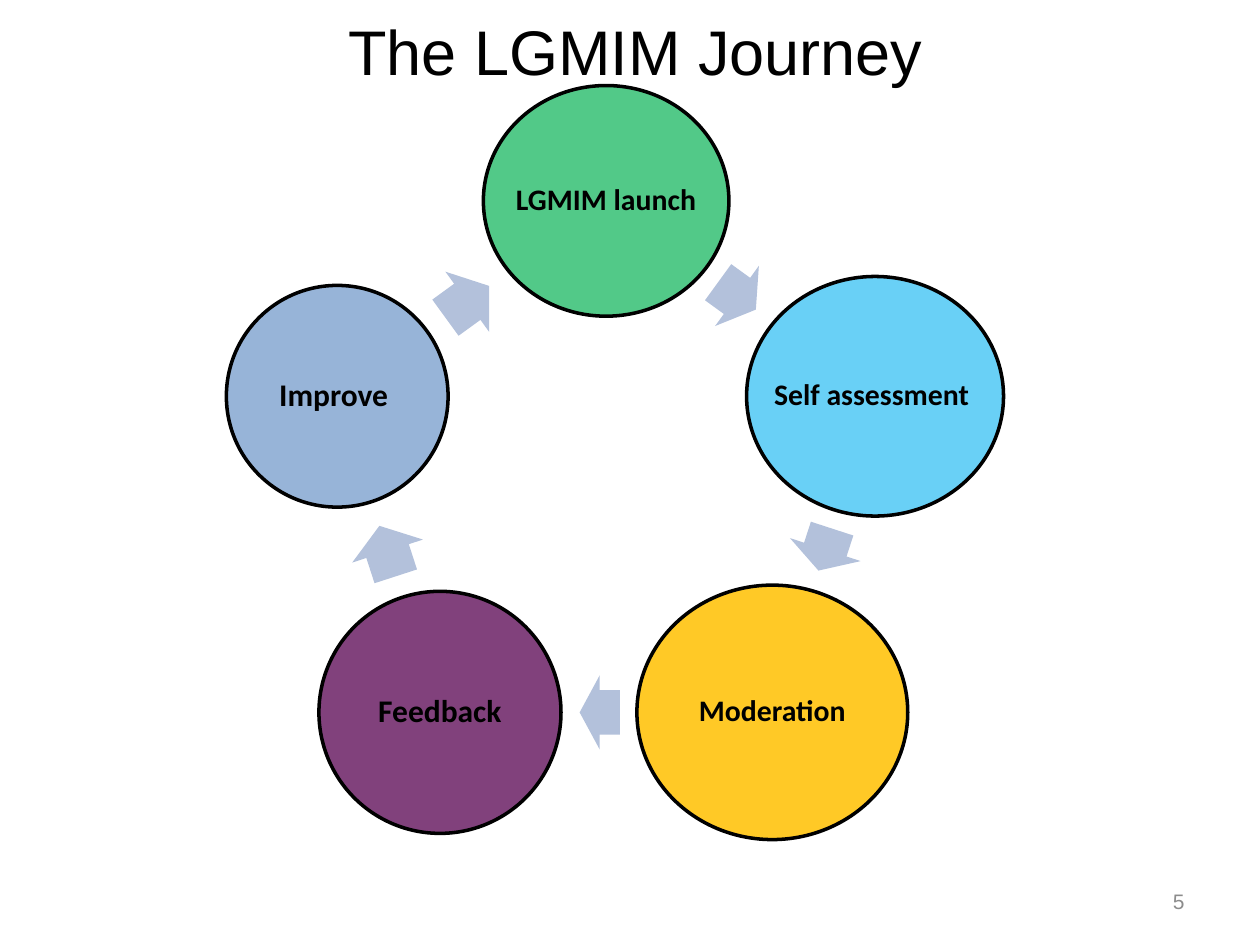
from math import cos, radians, sin

from lxml import etree
from pptx import Presentation
from pptx.dml.color import RGBColor
from pptx.enum.shapes import MSO_SHAPE
from pptx.enum.text import MSO_ANCHOR, PP_ALIGN
from pptx.oxml.ns import qn
from pptx.util import Cm, Pt

OVAL, ARROW = MSO_SHAPE.OVAL, MSO_SHAPE.RIGHT_ARROW
MIDDLE = MSO_ANCHOR.MIDDLE
CENTER, RIGHT = PP_ALIGN.CENTER, PP_ALIGN.RIGHT

BLACK = RGBColor(0x00, 0x00, 0x00)
GRAY = RGBColor(0x8C, 0x8C, 0x8C)
MIST = RGBColor(0xB3, 0xC1, 0xDB)
GREEN = RGBColor(0x00, 0xB0, 0x50)
SKY = RGBColor(0x00, 0xB0, 0xF0)
GOLD = RGBColor(0xFF, 0xC0, 0x00)
PLUM = RGBColor(0x5E, 0x0C, 0x58)
BLUE = RGBColor(0x4F, 0x81, 0xBD)

MID_X, MID_Y, RADIUS = 12.22, 9.75, 5.7
STEP = 72

STAGES = [
    ("LGMIM launch", 17, GREEN, 68, 4.95, 4.65, 0.94, -0.09),
    ("Self assessment ", 17, SKY, 59, 5.18, 4.83, 0.89, -0.1),
    ("Moderation", 17, GOLD, 85, 5.46, 5.13, 0.81, 0.13),
    ("Feedback", 18, PLUM, 78, 4.88, 4.88, 1.07, 0.07),
    ("Improve ", 18, BLUE, 59, 4.47, 4.47, 1.09, -0.11),
]


class Deck:
    def __init__(self):
        self.file = Presentation()
        self.file.slide_width = Cm(25.4)
        self.file.slide_height = Cm(19.05)
        self.slide = self.file.slides.add_slide(self.file.slide_layouts[5])

    def label(self, frame, text, size, font="Arial", color=BLACK,
              bold=False, align=CENTER, wrap=True, inset=None):
        look = {"word_wrap": wrap, "vertical_anchor": MIDDLE}
        if inset is not None:
            for side in ("left", "right", "top", "bottom"):
                look["margin_" + side] = Cm(inset)
        for name, value in look.items():
            setattr(frame, name, value)
        para = frame.paragraphs[0]
        para.alignment = align
        run = para.add_run()
        run.text = text
        style = {"name": font, "size": Pt(size), "bold": bold}
        for name, value in style.items():
            setattr(run.font, name, value)
        run.font.color.rgb = color
        return para

    def title(self, text, left, top, width, height):
        box = self.slide.shapes.title
        place = {"left": left, "top": top, "width": width, "height": height}
        for name, value in place.items():
            setattr(box, name, Cm(value))
        self.label(box.text_frame, text, 36)

    def number(self, text, left, top, width, height):
        box = self.slide.shapes.add_textbox(
            Cm(left), Cm(top), Cm(width), Cm(height))
        self.label(box.text_frame, text, 12, color=GRAY, align=RIGHT)

    def shape(self, kind, x, y, width, height, color):
        item = self.slide.shapes.add_shape(
            kind, Cm(x - width / 2), Cm(y - height / 2),
            Cm(width), Cm(height))
        item.shadow.inherit = False
        item.fill.solid()
        item.fill.fore_color.rgb = color
        return item

    def circle(self, text, size, x, y, width, height, color, alpha):
        item = self.shape(OVAL, x, y, width, height, color)
        tint = item.element.spPr.find(qn("a:solidFill"))[0]
        etree.SubElement(tint, qn("a:alpha"), val=str(alpha * 1000))
        item.line.color.rgb = BLACK
        item.line.width = Pt(2)
        para = self.label(item.text_frame, text, size, "Calibri",
                          bold=True, wrap=False, inset=0.05)
        para.line_spacing = 0.9

    def arrow(self, x, y, length, turn):
        item = self.shape(ARROW, x, y, length, 1.5, MIST)
        item.adjustments[0] = 0.6
        item.adjustments[1] = 0.5
        item.line.fill.background()
        item.rotation = turn


def orbit(angle, radius):
    turn = radians(angle)
    return MID_X + radius * sin(turn), MID_Y - radius * cos(turn)


def main():
    deck = Deck()
    deck.title("The LGMIM Journey", 0.71, 0.5, 24.2, 1.02)
    deck.number("5", 18.21, 17.65, 5.92, 1.02)
    half = STEP / 2
    for index, stage in enumerate(STAGES):
        text, size, color, alpha, width, height, length, shift = stage
        x, y = orbit(index * STEP, RADIUS)
        deck.circle(text, size, x, y, width, height, color, alpha)
        turn = index * STEP + half
        x, y = orbit(turn, RADIUS * cos(radians(half)))
        x += shift * cos(radians(turn))
        y += shift * sin(radians(turn))
        deck.arrow(x, y, length, turn)
    deck.file.save("out.pptx")


if __name__ == "__main__":
    main()
